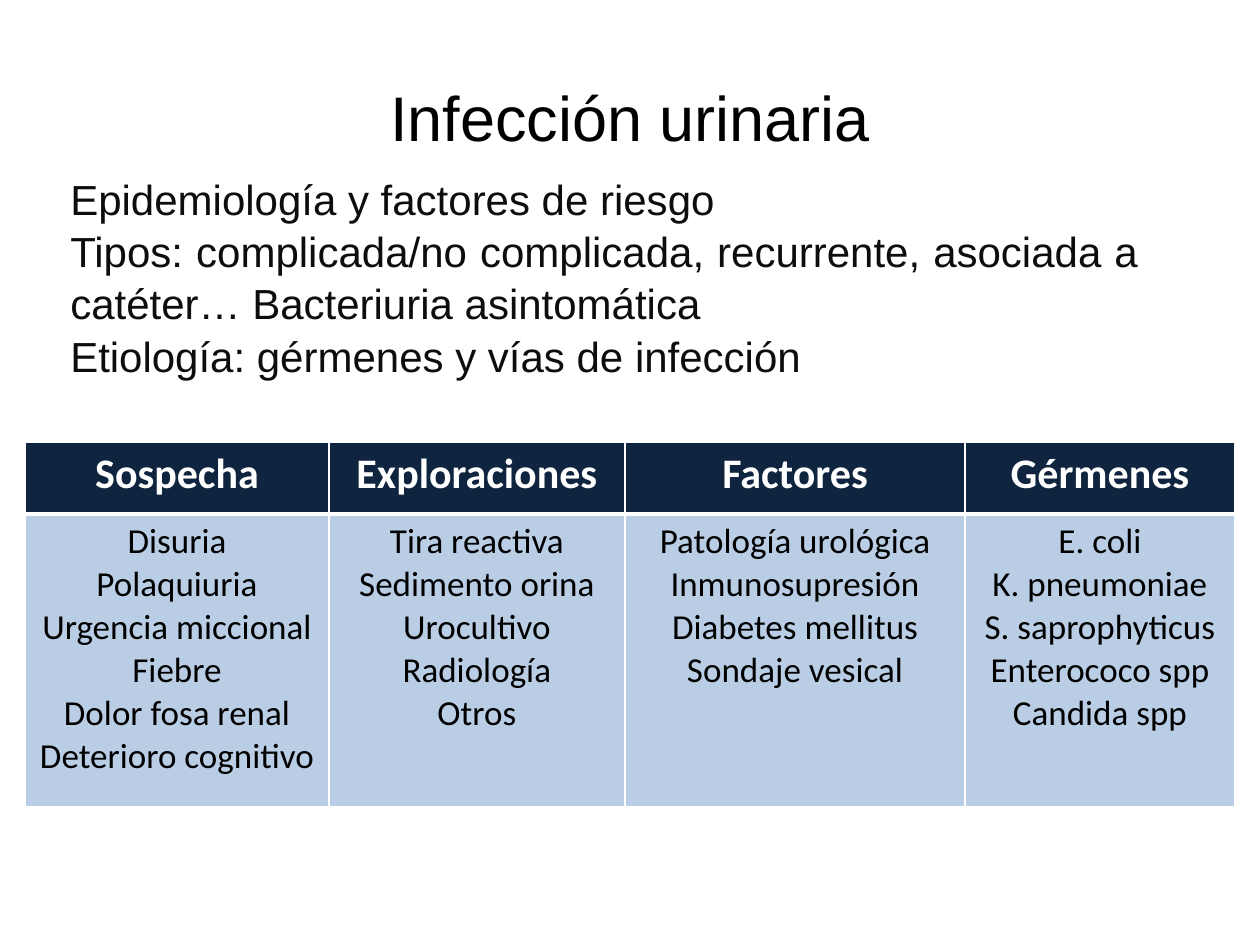
"""Build the slide on urinary infection: overview text and a clinical summary table."""
import pptx
import pptx.dml.color
import pptx.enum.text
import pptx.oxml
import pptx.oxml.ns
import pptx.util
from pptx.util import Inches

THEME = {
    "title": ("Arial", 36, "000000", False),
    "overview": ("Arial", 24, "0D0D0D", False),
    "header": ("Calibri", 24, "FFFFFF", True),
    "findings": ("Calibri", 20, "000000", False),
    "header_fill": "0F243E",
    "findings_fill": "B9CDE5",
    "border": "FFFFFF",
}
ALIGN = pptx.enum.text.PP_ALIGN


def write_lines(frame, lines, style, alignment):
    name, size, color, bold = THEME[style]
    frame.text = "\n".join(lines)
    for paragraph in frame.paragraphs:
        paragraph.alignment = alignment
        for run in paragraph.runs:
            run.font.name = name
            run.font.size = pptx.util.Pt(size)
            run.font.bold = bold
            run.font.color.rgb = pptx.dml.color.RGBColor.from_string(color)


def style_cell(cell, fill, border_widths):
    properties = cell._tc.get_or_add_tcPr()
    for side, width in border_widths.items():
        properties.append(pptx.oxml.parse_xml(
            f'<a:{side} {pptx.oxml.ns.nsdecls("a")} w="{pptx.util.Pt(width)}"><a:solidFill>'
            f'<a:srgbClr val="{THEME["border"]}"/></a:solidFill></a:{side}>'))
    cell.fill.solid()
    cell.fill.fore_color.rgb = pptx.dml.color.RGBColor.from_string(THEME[fill])


deck = pptx.Presentation()
deck.slide_width, deck.slide_height = Inches(10), Inches(7.5)
slide = deck.slides.add_slide(deck.slide_layouts[5])

title = slide.shapes.title
title.left, title.top, title.width, title.height = (
    Inches(0.5), Inches(0.3), Inches(9), Inches(1.25))
title.text_frame.vertical_anchor = pptx.enum.text.MSO_ANCHOR.MIDDLE
write_lines(title.text_frame, ["Infección urinaria"], "title", ALIGN.CENTER)

overview = slide.shapes.add_textbox(
    Inches(0.46), Inches(1.31), Inches(8.67), Inches(1.63)).text_frame
overview.word_wrap = True
write_lines(overview, [
    "Epidemiología y factores de riesgo",
    "Tipos: complicada/no complicada, recurrente, asociada a catéter… Bacteriuria asintomática",
    "Etiología: gérmenes y vías de infección",
], "overview", ALIGN.JUSTIFY)
for paragraph in overview.paragraphs:
    paragraph.line_spacing = 1.04

summary = [
    ("Sospecha", 2.41, ["Disuria", "Polaquiuria", "Urgencia miccional", "Fiebre",
                        "Dolor fosa renal", "Deterioro cognitivo"]),
    ("Exploraciones", 2.35, ["Tira reactiva", "Sedimento orina", "Urocultivo",
                             "Radiología", "Otros"]),
    ("Factores", 2.7, ["Patología urológica", "Inmunosupresión", "Diabetes mellitus",
                       "Sondaje vesical"]),
    ("Gérmenes", 2.14, ["E. coli", "K. pneumoniae", "S. saprophyticus",
                        "Enterococo spp", "Candida spp"]),
]
table = slide.shapes.add_table(
    2, len(summary), Inches(0.2), Inches(3.51), Inches(9.6), Inches(2.89)).table
table.rows[0].height, table.rows[1].height = Inches(0.57), Inches(2.32)
for column, (heading, width, findings) in enumerate(summary):
    table.columns[column].width = Inches(width)
    heading_cell, findings_cell = table.cell(0, column), table.cell(1, column)
    write_lines(heading_cell.text_frame, [heading], "header", ALIGN.CENTER)
    write_lines(findings_cell.text_frame, findings, "findings", ALIGN.CENTER)
    style_cell(heading_cell, "header_fill", {"lnL": 1, "lnR": 1, "lnT": 1, "lnB": 3})
    style_cell(findings_cell, "findings_fill", {"lnL": 1, "lnR": 1, "lnT": 3, "lnB": 1})

deck.save("out.pptx")
